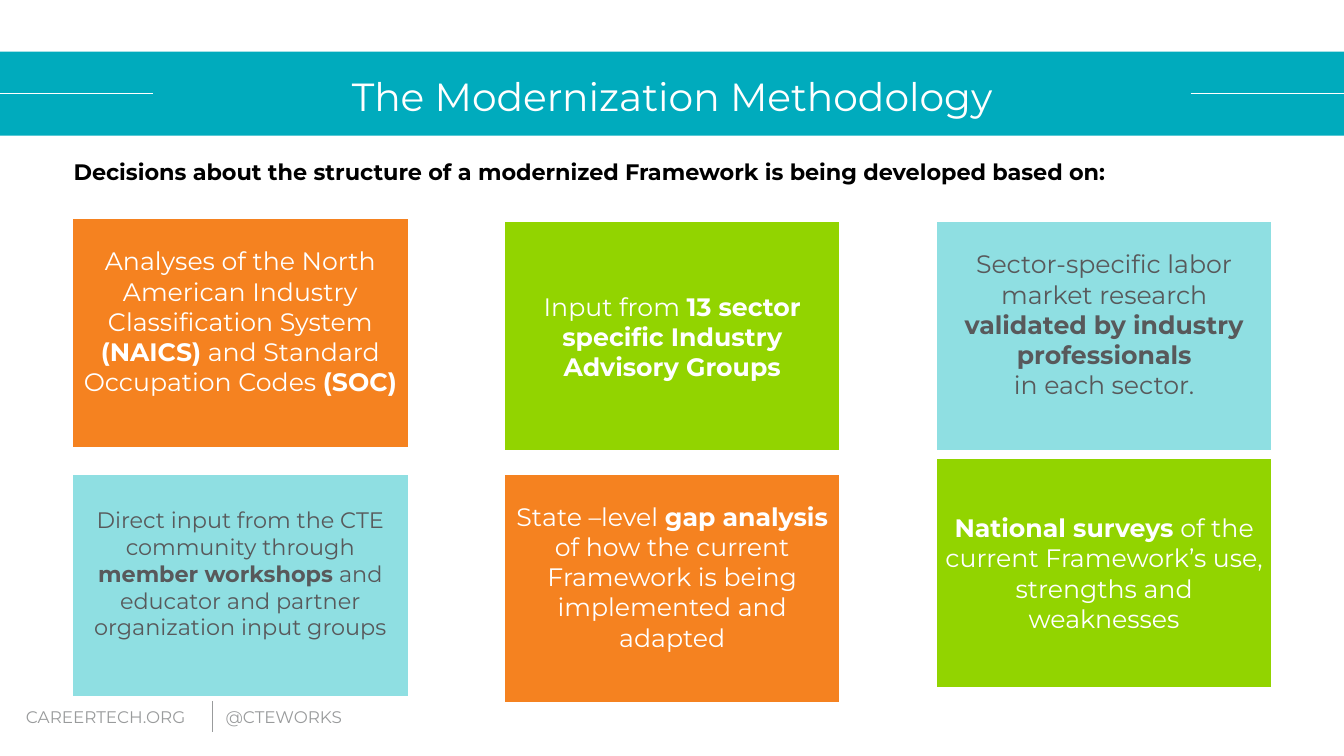
import pptx
import pptx.util
import pptx.dml.color
import pptx.enum.shapes
import pptx.enum.text
import pptx.oxml.ns
import lxml.etree

Pt = pptx.util.Pt
RECT = pptx.enum.shapes.MSO_SHAPE.RECTANGLE
LINE = pptx.enum.shapes.MSO_CONNECTOR.STRAIGHT
MID = pptx.enum.text.MSO_ANCHOR.MIDDLE
TOP = pptx.enum.text.MSO_ANCHOR.TOP
LEFT = pptx.enum.text.PP_ALIGN.LEFT
CENTER = pptx.enum.text.PP_ALIGN.CENTER

FONT = "Montserrat"
WHITE, BLACK, TEAL = "FFFFFF", "000000", "00ABBD"
ORANGE, GREEN, AQUA = "F58220", "92D400", "8FDFE2"
DARK, GREY = "58595B", "999B9C"
WIDE, HIGH = 960, 540
BAND = (0, 36.9, WIDE, 60)

TITLE = "The Modernization Methodology"
LEAD = "*Decisions about the structure of a modernized Framework is being developed based on:*"
FOOT = [("CAREERTECH.ORG", 11.5, 141), ("@CTEWORKS", 154, 107)]
RULES = [(0, 67, 109.5, 67, WHITE), (850.5, 67, WIDE, 67, WHITE),
         (151.8, 501, 151.8, 522.8, GREY)]

# column, top, height, fill, ink, size, foot inset, paragraphs with *bold* parts
CARDS = [
    (0, 155.7, 164.6, ORANGE, WHITE, 18, 20.6,
     ["Analyses of the North American Industry Classification System "
      "*(NAICS)* and Standard Occupation Codes *(SOC)*"]),
    (1, 157.8, 164.6, GREEN, WHITE, 18, 3.6,
     ["Input from *13 sector specific Industry Advisory Groups*"]),
    (2, 157.8, 164.6, AQUA, DARK, 18, 20.6,
     ["Sector-specific labor",
      "market research *validated by industry professionals*",
      "in each sector."]),
    (0, 338, 160, AQUA, DARK, 16, 20.6,
     ["Direct input from the CTE community through *member workshops* "
      "and educator and partner organization input groups"]),
    (1, 338, 164.6, ORANGE, WHITE, 18, 20.6,
     ["State –level *gap analysis* of how the current Framework "
      "is being implemented and adapted"]),
    (2, 326.9, 164.6, GREEN, WHITE, 18, 3.6,
     ["*National surveys* of the current Framework’s use, "
      "strengths and weaknesses"]),
]
START, STEP, CARD = 51.2, 308.5, 241


def tint(code):
    return pptx.dml.color.RGBColor.from_string(code)


def write(shape, paras, size, ink, align=LEFT, anchor=TOP):
    frame = shape.text_frame
    frame.word_wrap = True
    frame.vertical_anchor = anchor
    for i, text in enumerate(paras):
        para = frame.add_paragraph() if i else frame.paragraphs[0]
        para.alignment = align
        for j, part in enumerate(text.split("*")):
            if part:
                run = para.add_run()
                run.text = part
                run.font.name = FONT
                run.font.size = Pt(size)
                run.font.bold = j % 2 == 1
                run.font.color.rgb = tint(ink)
    return frame


def block(page, box, fill, edge=None):
    shape = page.shapes.add_shape(RECT, *map(Pt, box))
    shape.shadow.inherit = False
    shape.fill.solid()
    shape.fill.fore_color.rgb = tint(fill)
    if edge:
        shape.line.color.rgb = tint(edge)
        shape.line.width = Pt(2)
    else:
        shape.line.fill.background()
    return shape


def label(page, box, *style):
    return write(page.shapes.add_textbox(*map(Pt, box)), *style)


def rule(page, ends, ink):
    line = page.shapes.add_connector(LINE, *map(Pt, ends))
    line.line.color.rgb = tint(ink)
    line.line.width = Pt(0.75)
    lxml.etree.SubElement(line._element.spPr, pptx.oxml.ns.qn("a:effectLst"))


def main():
    deck = pptx.Presentation()
    deck.slide_width, deck.slide_height = Pt(WIDE), Pt(HIGH)
    page = deck.slides.add_slide(deck.slide_layouts[6])

    block(page, BAND, TEAL)
    for *ends, ink in RULES:
        rule(page, ends, ink)
    for text, left, width in FOOT:
        label(page, (left, 501, width, 21.8), [text], 12, GREY)

    head = label(page, (118, 36.9, 724, 60), [TITLE], 28, WHITE, CENTER, MID)
    head.margin_left = head.margin_right = head.margin_bottom = 0
    head.margin_top = Pt(7.2)
    head.paragraphs[0].line_spacing = 0.9
    label(page, (45.5, 109.5, 827, 65.5), [LEAD], 16, BLACK)

    for col, top, height, fill, ink, size, foot, paras in CARDS:
        card = block(page, (START + col * STEP, top, CARD, height), fill, WHITE)
        frame = write(card, paras, size, ink, CENTER, MID)
        frame.margin_bottom = Pt(foot)

    deck.save("out.pptx")


if __name__ == "__main__":
    main()
